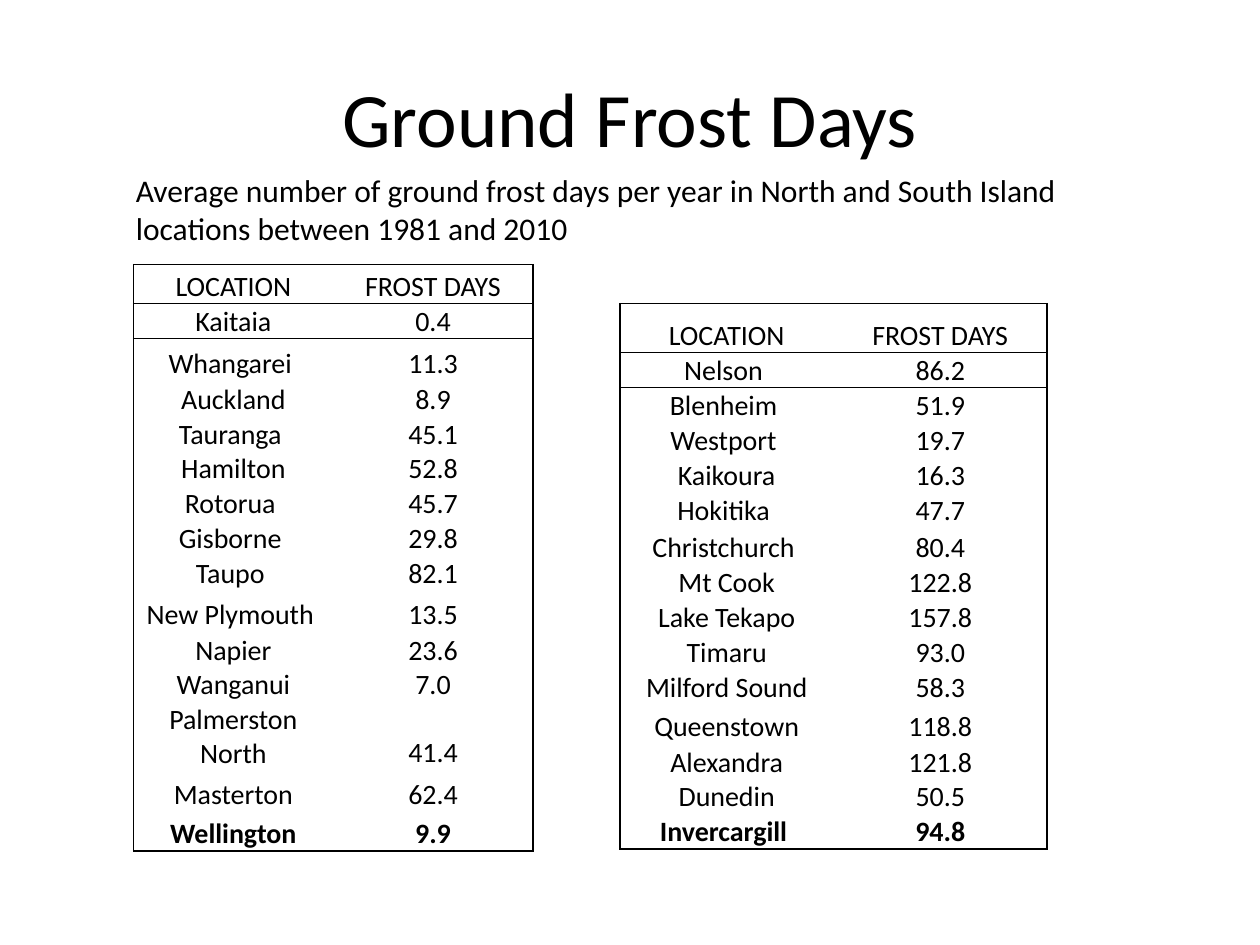
from lxml import etree
from pptx import Presentation
from pptx.dml.color import RGBColor
from pptx.enum import text
from pptx.oxml.ns import qn
from pptx.util import Inches, Pt

COLORS = {"ink": "000000", "paper": "FFFFFF"}
FONT = "Calibri"
HEADER = ("LOCATION", "FROST DAYS")

NORTH = [
    ("Kaitaia", "0.4"), ("Whangarei ", "11.3"), ("Auckland", "8.9"),
    ("Tauranga ", "45.1"), ("Hamilton", "52.8"), ("Rotorua ", "45.7"),
    ("Gisborne ", "29.8"), ("Taupo ", "82.1"), ("New Plymouth ", "13.5"),
    ("Napier", "23.6"), ("Wanganui", "7.0"), ("Palmerston North", "41.4"),
    ("Masterton", "62.4"), ("Wellington", "9.9"),
]
SOUTH = [
    ("Nelson ", "86.2"), ("Blenheim ", "51.9"), ("Westport ", "19.7"),
    ("Kaikoura", "16.3"), ("Hokitika ", "47.7"), ("Christchurch ", "80.4"),
    ("Mt Cook", "122.8"), ("Lake Tekapo", "157.8"), ("Timaru", "93.0"),
    ("Milford Sound", "58.3"), ("Queenstown", "118.8"), ("Alexandra", "121.8"),
    ("Dunedin", "50.5"), ("Invercargill ", "94.8"),
]
# Rows that differ from the usual height of their table
NORTH_HEIGHTS = {0: 0.31, 2: 0.34, 9: 0.33, 12: 0.49, 13: 0.33, 14: 0.31}
SOUTH_HEIGHTS = {0: 0.39, 6: 0.3, 8: 0.28, 10: 0.28, 11: 0.31, 14: 0.24}


def write(tf, content, size, align=text.PP_ALIGN.LEFT, bold=False):
    """Fill a text frame, one paragraph for each line of content."""
    for i, line in enumerate(content.split("\n")):
        p = tf.paragraphs[0] if i == 0 else tf.add_paragraph()
        p.alignment = align
        r = p.add_run()
        r.text = line
        r.font.size = Pt(size)
        r.font.name = FONT
        r.font.bold = bold
        r.font.color.rgb = RGBColor.from_string(COLORS["ink"])


def add_text(slide, box, content, size, wrap=True,
             anchor=text.MSO_ANCHOR.TOP, **fmt):
    tf = slide.shapes.add_textbox(*map(Inches, box)).text_frame
    tf.word_wrap = wrap
    tf.vertical_anchor = anchor
    write(tf, content, size, **fmt)


def set_borders(cell, visible):
    """Rule the sides named in visible and clear the others."""
    tc_pr = cell._tc.get_or_add_tcPr()
    for side in "LRTB":
        ln = etree.SubElement(tc_pr, qn(f"a:ln{side}"), w=str(Pt(1)))
        if side in visible:
            fill = etree.SubElement(ln, qn("a:solidFill"))
            etree.SubElement(fill, qn("a:srgbClr"), val=COLORS["ink"])
        else:
            etree.SubElement(ln, qn("a:noFill"))


def add_frost_table(slide, box, records, row_height, heights):
    rows = [HEADER] + records
    last = len(rows) - 1
    table = slide.shapes.add_table(len(rows), 2, *map(Inches, box)).table
    table.first_row = table.horz_banding = False
    for col in table.columns:
        col.width = Inches(box[2] / 2)
    for i, values in enumerate(rows):
        table.rows[i].height = Inches(heights.get(i, row_height))
        # Rules frame the table, the header and the first record
        rules = ("T" if i <= 2 else "") + ("B" if i in (0, 1, last) else "")
        for j, value in enumerate(values):
            cell = table.cell(i, j)
            cell.margin_left = cell.margin_right = cell.margin_top = Inches(0.01)
            cell.margin_bottom = 0
            cell.vertical_anchor = text.MSO_ANCHOR.BOTTOM
            write(cell.text_frame, value, 16, text.PP_ALIGN.CENTER, i == last)
            set_borders(cell, rules + "LR"[j])
            cell.fill.solid()
            cell.fill.fore_color.rgb = RGBColor.from_string(COLORS["paper"])


def main():
    prs = Presentation()
    prs.slide_width, prs.slide_height = Inches(10), Inches(7.5)
    slide = prs.slides.add_slide(prs.slide_layouts[6])

    # Title and introduction
    add_text(slide, (0.5, 0.3, 9, 1.25), "Ground Frost Days", 44,
             anchor=text.MSO_ANCHOR.MIDDLE, align=text.PP_ALIGN.CENTER)
    add_text(slide, (0.98, 1.31, 7.59, 0.71),
             "Average number of ground frost days per year in North and South "
             "Island\nlocations between 1981 and 2010", 18, wrap=False)

    # North Island and South Island tables
    add_frost_table(slide, (1.06, 2.1, 3.17, 4.63), NORTH, 0.27, NORTH_HEIGHTS)
    add_frost_table(slide, (4.92, 2.41, 3.39, 4.29), SOUTH, 0.25, SOUTH_HEIGHTS)

    prs.save("out.pptx")


if __name__ == "__main__":
    main()
